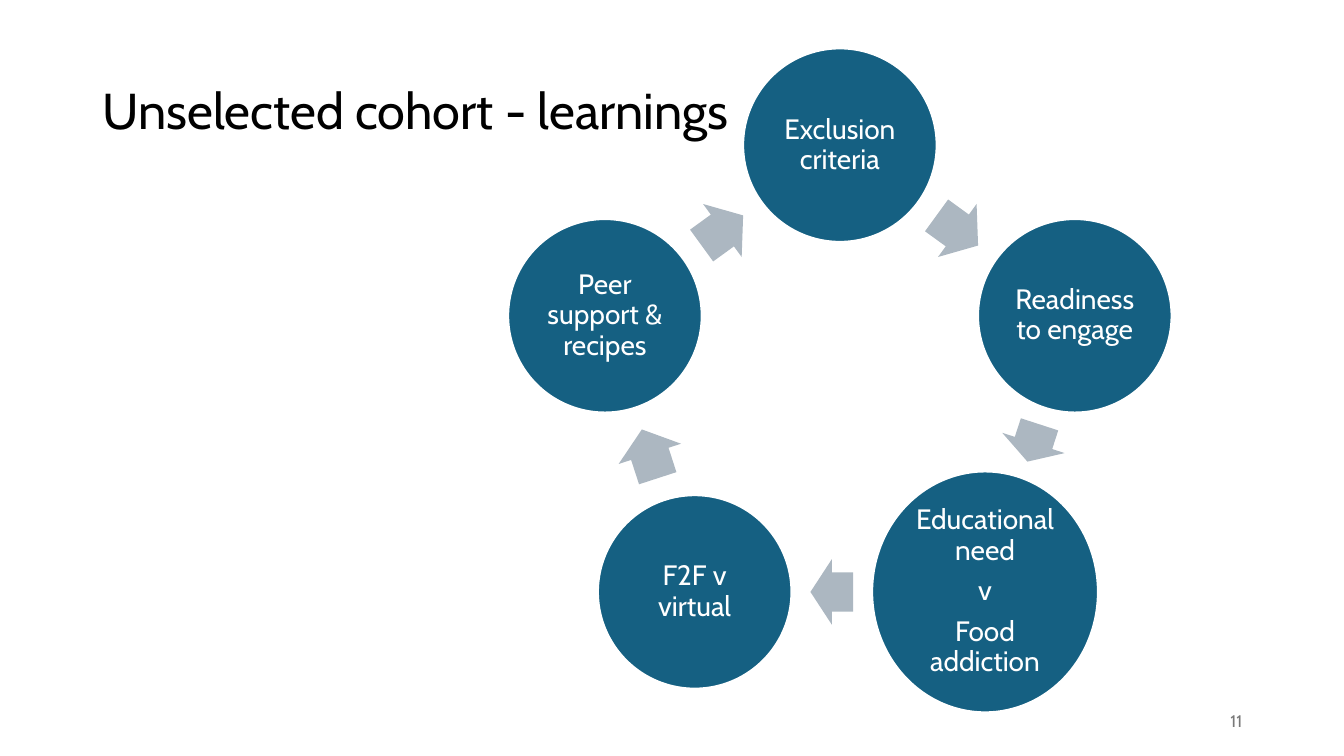
from math import atan2, cos, degrees, hypot, radians, sin

from pptx import Presentation
from pptx.dml.color import RGBColor
from pptx.enum.shapes import MSO_SHAPE
from pptx.enum.text import MSO_ANCHOR, PP_ALIGN
from pptx.util import Inches, Pt

FONT = "Cabin"
WHITE, BLACK, GREY = "FFFFFF", "000000", "797979"
NODE_BLUE, ARROW_GREY = "156082", "ACB7C1"
LEARNINGS = [
    (["Exclusion criteria"], 1.92, 1.92),
    (["Readiness to engage"], 1.92, 1.92),
    (["Educational need", "v", "Food addiction"], 2.24, 2.39),
    (["F2F v virtual"], 1.92, 1.92),
    (["Peer support & recipes"], 1.92, 1.92),
]


def color(hex_value):
    """Turn a hex string into a colour."""
    return RGBColor.from_string(hex_value)


def write(frame, lines, size, hex_value, align, line_spacing=1.0, gap=0):
    """Fill a text frame with one middle-anchored paragraph per line."""
    frame.word_wrap = True
    frame.vertical_anchor = MSO_ANCHOR.MIDDLE
    for index, line in enumerate(lines):
        paragraph = frame.paragraphs[0] if index == 0 else frame.add_paragraph()
        paragraph.alignment = align
        paragraph.line_spacing = line_spacing
        paragraph.space_after = Pt(gap)
        run = paragraph.add_run()
        run.text = line
        run.font.name = FONT
        run.font.size = Pt(size)
        run.font.color.rgb = color(hex_value)


def add_label(slide, box, text, size, hex_value, align, line_spacing=1.0):
    """Place a line of text in a box."""
    label = slide.shapes.add_textbox(*map(Inches, box))
    write(label.text_frame, [text], size, hex_value, align, line_spacing)


def add_centered(slide, kind, center, width, height, fill):
    """Place a flat filled shape around its centre."""
    x, y = center
    shape = slide.shapes.add_shape(kind, Inches(x - width / 2), Inches(y - height / 2),
                                   Inches(width), Inches(height))
    shape.shadow.inherit = False
    shape.fill.solid()
    shape.fill.fore_color.rgb = color(fill)
    return shape


def add_node(slide, center, lines, width, height):
    """Draw one learning as a circle with its text."""
    node = add_centered(slide, MSO_SHAPE.OVAL, center, width, height, NODE_BLUE)
    node.line.color.rgb = color(WHITE)
    node.line.width = Pt(1.5)
    frame = node.text_frame
    frame.margin_left = frame.margin_right = Inches(0.03)
    frame.margin_top = frame.margin_bottom = Inches(0.03)
    write(frame, lines, 20, WHITE, PP_ALIGN.CENTER, 0.9, 7.5)


def edge_distance(width, height, angle):
    """Give the distance from an ellipse's centre to its edge."""
    return 1 / hypot(cos(angle) / (width / 2), sin(angle) / (height / 2))


def add_arrow(slide, start, end, start_size, end_size):
    """Draw an arrow in the middle of the gap between two nodes."""
    dx, dy = end[0] - start[0], end[1] - start[1]
    angle = atan2(dy, dx)
    leave = edge_distance(*start_size, angle)
    gap = hypot(dx, dy) - leave - edge_distance(*end_size, angle)
    reach = leave + gap / 2
    middle = (start[0] + reach * cos(angle), start[1] + reach * sin(angle))
    arrow = add_centered(slide, MSO_SHAPE.RIGHT_ARROW, middle, 0.53 * gap, 0.65, ARROW_GREY)
    arrow.line.fill.background()
    arrow.adjustments[0] = 0.6
    arrow.adjustments[1] = 0.5
    arrow.rotation = round(degrees(angle)) % 360


def add_cycle(slide, center, radius, learnings):
    """Set the learnings clockwise on a ring, joined by arrows."""
    step = 360 / len(learnings)
    angles = [radians(step * index - 90) for index in range(len(learnings))]
    centers = [(center[0] + radius * cos(a), center[1] + radius * sin(a)) for a in angles]
    for index, (lines, *size) in enumerate(learnings):
        following = (index + 1) % len(learnings)
        add_node(slide, centers[index], lines, *size)
        add_arrow(slide, centers[index], centers[following], size, learnings[following][1:])


def main():
    """Build and save the slide."""
    deck = Presentation()
    deck.slide_width, deck.slide_height = Inches(13.33), Inches(7.5)
    slide = deck.slides.add_slide(deck.slide_layouts[6])
    add_label(slide, (0.92, 0.4, 11.5, 1.45), "Unselected cohort - learnings",
              36, BLACK, PP_ALIGN.LEFT, 0.9)
    add_label(slide, (9.42, 6.95, 3, 0.4), "11", 12, GREY, PP_ALIGN.RIGHT)
    add_cycle(slide, (8.33, 3.89), 2.45, LEARNINGS)
    deck.save("out.pptx")


if __name__ == "__main__":
    main()
